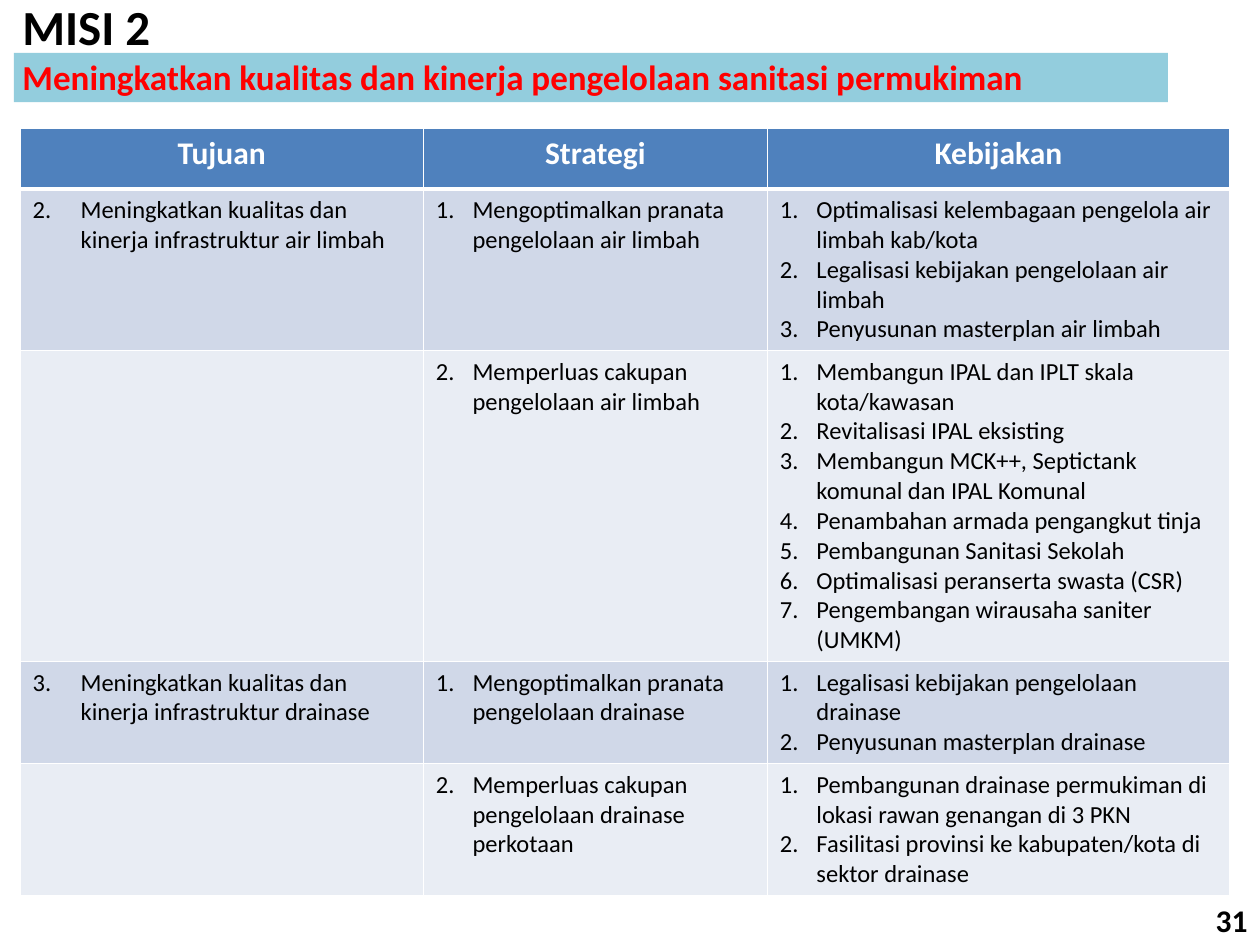
import dataclasses
import typing

import lxml.etree
import pptx
import pptx.dml.color
import pptx.enum.shapes
import pptx.enum.text
import pptx.oxml.ns
import pptx.util

RGBColor = pptx.dml.color.RGBColor
Align = pptx.enum.text.PP_ALIGN
Inches = pptx.util.Inches
qn = pptx.oxml.ns.qn

WHITE = RGBColor(0xFF, 0xFF, 0xFF)
BLACK = RGBColor(0, 0, 0)
RED = RGBColor(0xFF, 0, 0)
HEADER_BLUE = RGBColor(0x4F, 0x81, 0xBD)
BAND_DARK = RGBColor(0xD0, 0xD8, 0xE8)
BAND_LIGHT = RGBColor(0xE9, 0xED, 0xF4)
BANNER_TEAL = RGBColor(0x93, 0xCD, 0xDD)

SLIDE_WIDTH, SLIDE_HEIGHT = 10, 7.5
FONT = "Calibri"
COLUMN_WIDTHS = (3.2, 2.73, 3.67)
ROW_HEIGHTS = (0.48, 1.27, 2.44, 0.8, 1.04)
COLUMN_INDENTS = (0.38, 0.29, 0.29)
HEADINGS = ("Tujuan", "Strategi", "Kebijakan")


@dataclasses.dataclass(frozen=True)
class Numbered:
    items: tuple[str, ...] = ()
    start: int = 1


@dataclasses.dataclass(frozen=True)
class Mission:
    goal: Numbered
    strategy: Numbered
    policies: Numbered


MISSIONS = (
    Mission(
        Numbered(("Meningkatkan kualitas dan kinerja infrastruktur air limbah",), 2),
        Numbered(("Mengoptimalkan pranata pengelolaan air limbah",)),
        Numbered((
            "Optimalisasi kelembagaan pengelola air limbah kab/kota",
            "Legalisasi kebijakan pengelolaan air limbah",
            "Penyusunan masterplan air limbah",
        )),
    ),
    Mission(
        Numbered(),
        Numbered(("Memperluas cakupan pengelolaan air limbah",), 2),
        Numbered((
            "Membangun IPAL dan IPLT skala kota/kawasan",
            "Revitalisasi IPAL eksisting",
            "Membangun MCK++, Septictank komunal dan IPAL Komunal",
            "Penambahan armada pengangkut tinja",
            "Pembangunan Sanitasi Sekolah",
            "Optimalisasi peranserta swasta (CSR)",
            "Pengembangan wirausaha saniter (UMKM)",
        )),
    ),
    Mission(
        Numbered(("Meningkatkan kualitas dan kinerja infrastruktur drainase",), 3),
        Numbered(("Mengoptimalkan pranata pengelolaan drainase",)),
        Numbered((
            "Legalisasi kebijakan pengelolaan drainase",
            "Penyusunan masterplan drainase",
        )),
    ),
    Mission(
        Numbered(),
        Numbered(("Memperluas cakupan pengelolaan drainase perkotaan",), 2),
        Numbered((
            "Pembangunan drainase permukiman di lokasi rawan genangan di 3 PKN",
            "Fasilitasi provinsi ke kabupaten/kota di sektor drainase",
        )),
    ),
)


def area(left: float, top: float, width: float, height: float) -> tuple[int, ...]:
    """Turn shares of the slide's width and height into lengths."""
    return (Inches(left * SLIDE_WIDTH), Inches(top * SLIDE_HEIGHT),
            Inches(width * SLIDE_WIDTH), Inches(height * SLIDE_HEIGHT))


def write(frame: typing.Any, text: str, *, size: float, color: RGBColor = BLACK,
          bold: bool = False, align: Align = Align.LEFT) -> typing.Any:
    """Fill the frame's empty first paragraph, or add one after it."""
    first = frame.paragraphs[0]
    paragraph = frame.add_paragraph() if first.runs else first
    paragraph.alignment = align
    run = paragraph.add_run()
    run.text = text
    run.font.name = FONT
    run.font.size = pptx.util.Pt(size)
    run.font.bold = bold
    run.font.color.rgb = color
    return paragraph


def number(paragraph: typing.Any, start: int, indent: float) -> None:
    properties = paragraph._p.get_or_add_pPr()
    properties.set("marL", str(Inches(indent)))
    properties.set("indent", str(-Inches(indent)))
    bullet = lxml.etree.SubElement(properties, qn("a:buAutoNum"), type="arabicPeriod")
    if start > 1:
        bullet.set("startAt", str(start))


def style_cell(cell: typing.Any, fill: RGBColor, top: float = 1, bottom: float = 1) -> None:
    """Border widths are points; borders must come before the fill."""
    properties = cell._tc.get_or_add_tcPr()
    for side, width in (("L", 1), ("R", 1), ("T", top), ("B", bottom)):
        line = lxml.etree.SubElement(properties, qn(f"a:ln{side}"),
                                     w=str(pptx.util.Pt(width)))
        paint = lxml.etree.SubElement(line, qn("a:solidFill"))
        lxml.etree.SubElement(paint, qn("a:srgbClr"), val=str(WHITE))
    cell.fill.solid()
    cell.fill.fore_color.rgb = fill


def draw_table(slide: typing.Any) -> None:
    table = slide.shapes.add_table(
        len(ROW_HEIGHTS), len(COLUMN_WIDTHS), Inches(0.16), Inches(1.02),
        Inches(sum(COLUMN_WIDTHS)), Inches(sum(ROW_HEIGHTS))).table
    for column, width in zip(table.columns, COLUMN_WIDTHS):
        column.width = Inches(width)
    for row, height in zip(table.rows, ROW_HEIGHTS):
        row.height = Inches(height)

    for column, heading in enumerate(HEADINGS):
        cell = table.cell(0, column)
        style_cell(cell, HEADER_BLUE, bottom=3)
        write(cell.text_frame, heading, size=18, color=WHITE, bold=True,
              align=Align.CENTER)

    for row, mission in enumerate(MISSIONS, start=1):
        band = BAND_DARK if row % 2 else BAND_LIGHT
        entries = (mission.goal, mission.strategy, mission.policies)
        for column, (entry, indent) in enumerate(zip(entries, COLUMN_INDENTS)):
            cell = table.cell(row, column)
            style_cell(cell, band, top=3 if row == 1 else 1)
            for item in entry.items:
                number(write(cell.text_frame, item, size=14), entry.start, indent)


def draw_banner(slide: typing.Any) -> None:
    banner = slide.shapes.add_shape(pptx.enum.shapes.MSO_SHAPE.RECTANGLE,
                                    *area(0.011, 0.056, 0.916, 0.052))
    banner.shadow.inherit = False
    banner.fill.solid()
    banner.fill.fore_color.rgb = BANNER_TEAL
    banner.line.fill.background()


def add_text_frame(slide: typing.Any, *shares: float) -> typing.Any:
    frame = slide.shapes.add_textbox(*area(*shares)).text_frame
    frame.word_wrap = True
    frame.auto_size = pptx.enum.text.MSO_AUTO_SIZE.SHAPE_TO_FIT_TEXT
    return frame


def main() -> None:
    presentation = pptx.Presentation()
    presentation.slide_width = Inches(SLIDE_WIDTH)
    presentation.slide_height = Inches(SLIDE_HEIGHT)
    slide = presentation.slides.add_slide(presentation.slide_layouts[6])

    draw_table(slide)
    draw_banner(slide)
    title = add_text_frame(slide, 0.008, -0.01, 0.93, 0.12)
    write(title, "MISI 2", size=28, bold=True, align=Align.JUSTIFY)
    write(title, "Meningkatkan kualitas dan kinerja pengelolaan sanitasi permukiman",
          size=20, color=RED, bold=True, align=Align.JUSTIFY)
    page_number = add_text_frame(slide, 0.925, 0.947, 0.075, 0.053)
    write(page_number, "31", size=18, bold=True, align=Align.RIGHT)

    presentation.save("out.pptx")


if __name__ == "__main__":
    main()
